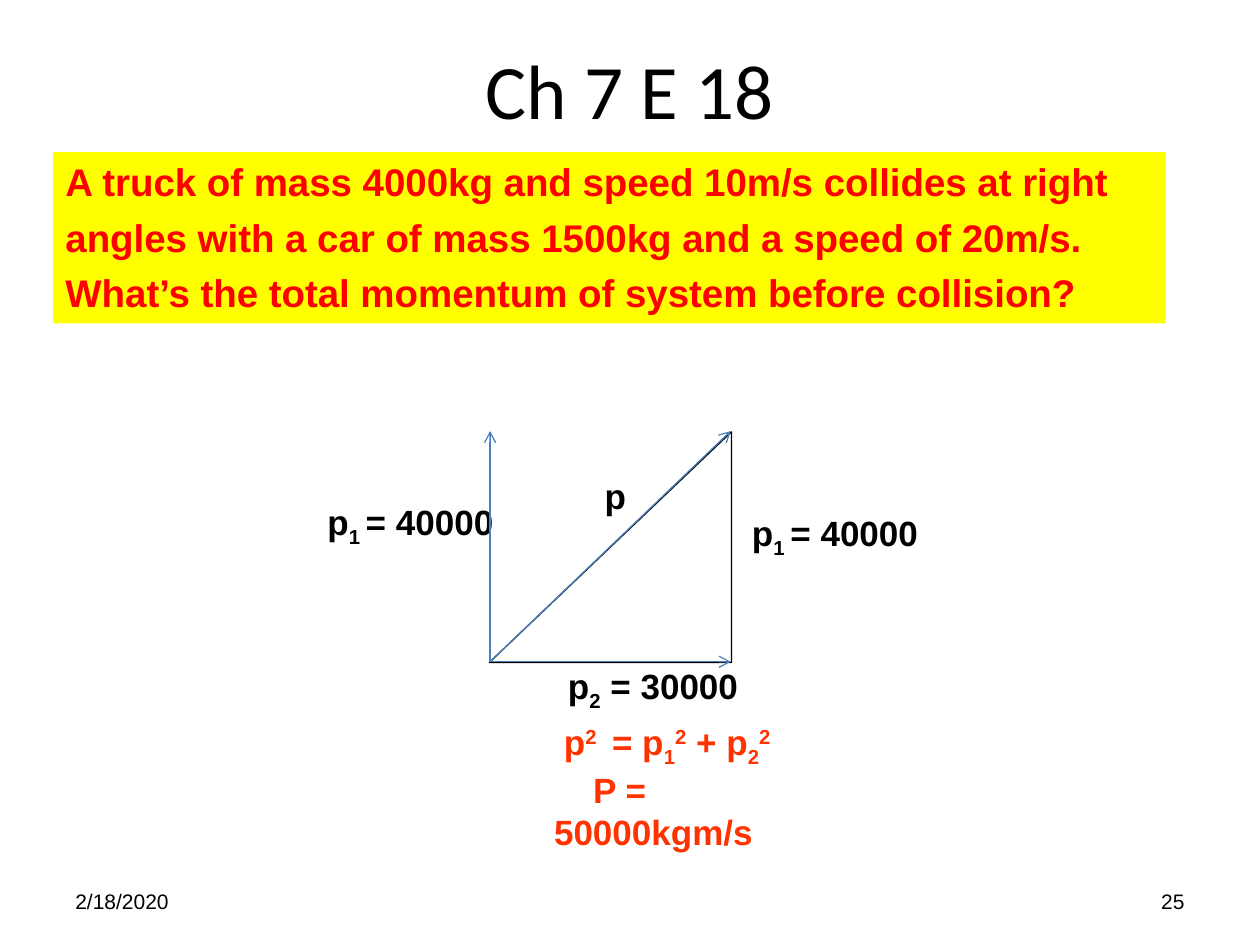
"""Build a slide on the total momentum of two bodies moving at right angles."""
import pptx
import pptx.dml.color
import pptx.enum.shapes
import pptx.enum.text
import pptx.util
from lxml import etree

Cm = pptx.util.Cm
Pt = pptx.util.Pt
ALIGN = pptx.enum.text.PP_ALIGN
ANCHOR = pptx.enum.text.MSO_ANCHOR
SHAPE = pptx.enum.shapes.MSO_SHAPE
SUB, SUPER = -25000, 30000


def color(hex_string):
    return pptx.dml.color.RGBColor.from_string(hex_string)


def write_text(shape, paragraphs, size=20, font="Arial", fill="000000", bold=True,
               align=ALIGN.LEFT, anchor=ANCHOR.TOP, wrap=True, before=0, margin=0, indents=()):
    frame = shape.text_frame
    frame.word_wrap = wrap
    frame.vertical_anchor = anchor
    for index, runs in enumerate(paragraphs):
        paragraph = frame.paragraphs[0] if index == 0 else frame.add_paragraph()
        paragraph.alignment = align
        paragraph.space_before = Pt(before)
        if indents:
            properties = paragraph._p.get_or_add_pPr()
            properties.set("marL", str(Cm(margin)))
            properties.set("indent", str(Cm(indents[index])))
        for text, baseline in runs:
            run = paragraph.add_run()
            run.text = text
            run.font.size = Pt(size)
            run.font.name = font
            run.font.bold = bold
            run.font.color.rgb = color(fill)
            if baseline:
                run.font._element.set("baseline", str(baseline))


presentation = pptx.Presentation()
presentation.slide_width = Cm(25.4)
presentation.slide_height = Cm(19.05)
slide = presentation.slides.add_slide(presentation.slide_layouts[5])
shapes = slide.shapes

footers = [(1.27, "2/18/2020", ALIGN.LEFT), (18.21, "25", ALIGN.RIGHT)]
for left, text, align in footers:
    footer = shapes.add_textbox(Cm(left), Cm(17.66), Cm(5.92), Cm(1.01))
    write_text(footer, [[(text, 0)]], size=12, bold=False, align=align, anchor=ANCHOR.MIDDLE)

question = shapes.add_shape(SHAPE.RECTANGLE, Cm(1.07), Cm(3.07), Cm(22.43), Cm(3.45))
question.shadow.inherit = False
question.fill.solid()
question.fill.fore_color.rgb = color("FFFF00")
question.line.fill.background()
question_lines = [
    "A truck of mass 4000kg and speed 10m/s collides at right",
    "angles with a car of mass 1500kg and a speed of 20m/s.",
    "What’s the total momentum of system before collision?",
]
write_text(question, [[(line, 0)] for line in question_lines], size=22, fill="FF0000",
           before=5.3, margin=0.95, indents=[-0.95] * 3)

title = shapes.title
title.left, title.top, title.width, title.height = Cm(1.27), Cm(0.2), Cm(22.86), Cm(3.18)
write_text(title, [[("Ch 7 E 18", 0)]], size=44, font="Calibri", bold=False,
           align=ALIGN.CENTER, anchor=ANCHOR.MIDDLE)

triangle = shapes.add_shape(SHAPE.RIGHT_TRIANGLE, Cm(9.98), Cm(8.59), Cm(4.65), Cm(4.88))
triangle.rotation = 270
triangle.shadow.inherit = False
triangle.fill.solid()
triangle.fill.fore_color.rgb = color("FFFFFF")
triangle.line.color.rgb = color("000000")
triangle.line.width = Pt(0.75)

momentum_1 = [("p", 0), ("1 ", SUB), ("= 40000", 0)]
momentum_2 = [("p", 0), ("2", SUB), (" = 30000", 0)]
labels = [
    (14.91, 10.19, 3.89, momentum_1),
    (11.2, 13.28, 3.96, momentum_2),
    (11.94, 9.45, 0.94, [("p", 0)]),
    (6.35, 9.96, 3.89, momentum_1),
]
for left, top, width, runs in labels:
    label = shapes.add_textbox(Cm(left), Cm(top), Cm(width), Cm(1.09))
    write_text(label, [runs], wrap=False)

solution = shapes.add_textbox(Cm(10.92), Cm(14.4), Cm(5.8), Cm(2.7))
pythagoras = [("p", 0), ("2 ", SUPER), (" = p", 0), ("1", SUB), ("2", SUPER),
              (" + p", 0), ("2", SUB), ("2", SUPER)]
write_text(solution, [pythagoras, [("P = 50000kgm/s", 0)]], fill="FF3300", indents=[0.2, 0.79])

origin_x, origin_y = 9.88, 13.34
tip_x, tip_y = 14.73, 8.69
for end_x, end_y in [(origin_x, tip_y), (tip_x, tip_y), (tip_x, origin_y)]:
    arrow = shapes.add_connector(pptx.enum.shapes.MSO_CONNECTOR.STRAIGHT,
                                 Cm(origin_x), Cm(origin_y), Cm(end_x), Cm(end_y))
    arrow.line.color.rgb = color("4B7EBC")
    arrow.line.width = Pt(0.75)
    etree.SubElement(arrow.line._get_or_add_ln(), pptx.oxml.ns.qn("a:tailEnd"), type="arrow")
    etree.SubElement(arrow._element.spPr, pptx.oxml.ns.qn("a:effectLst"))

presentation.save("out.pptx")
